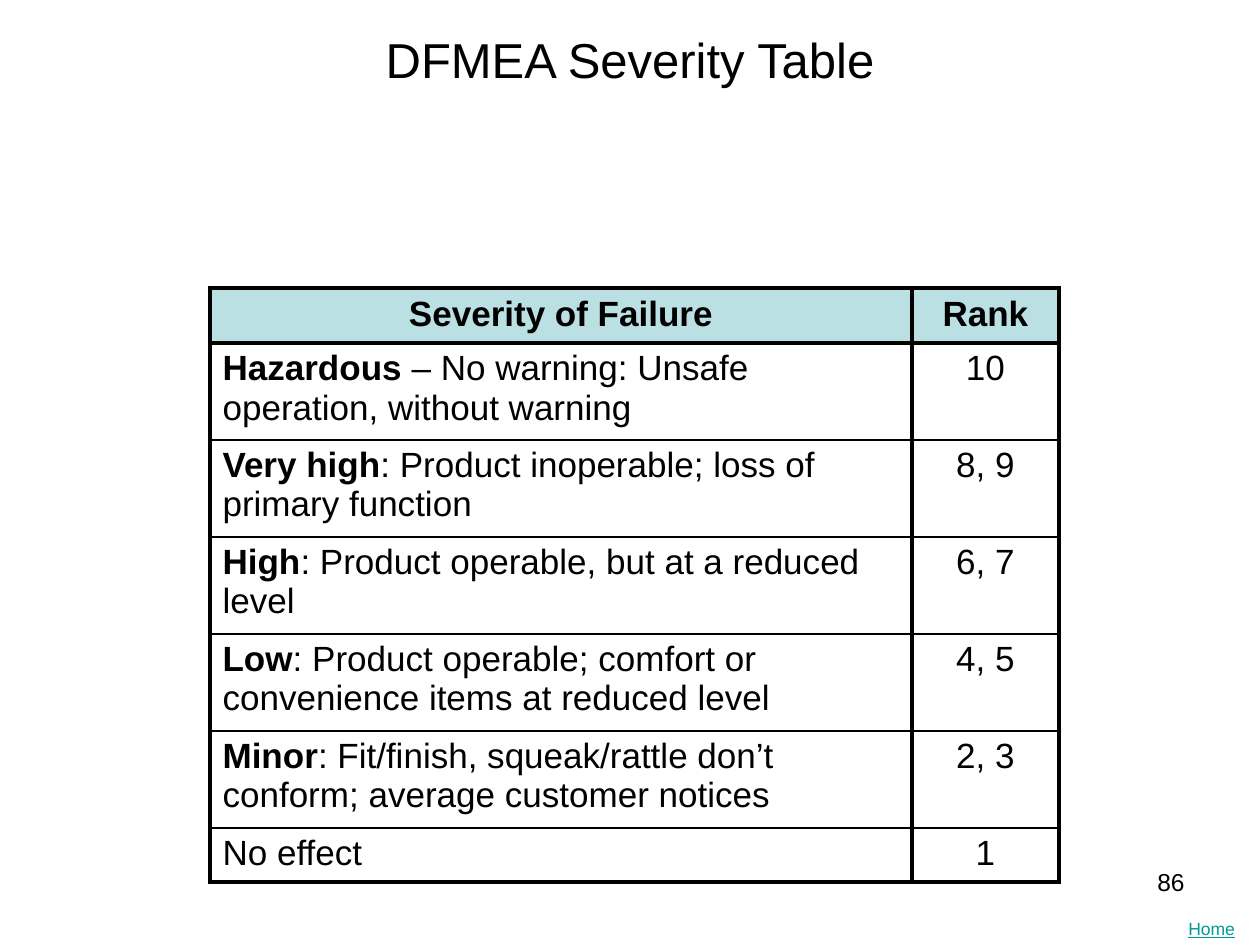
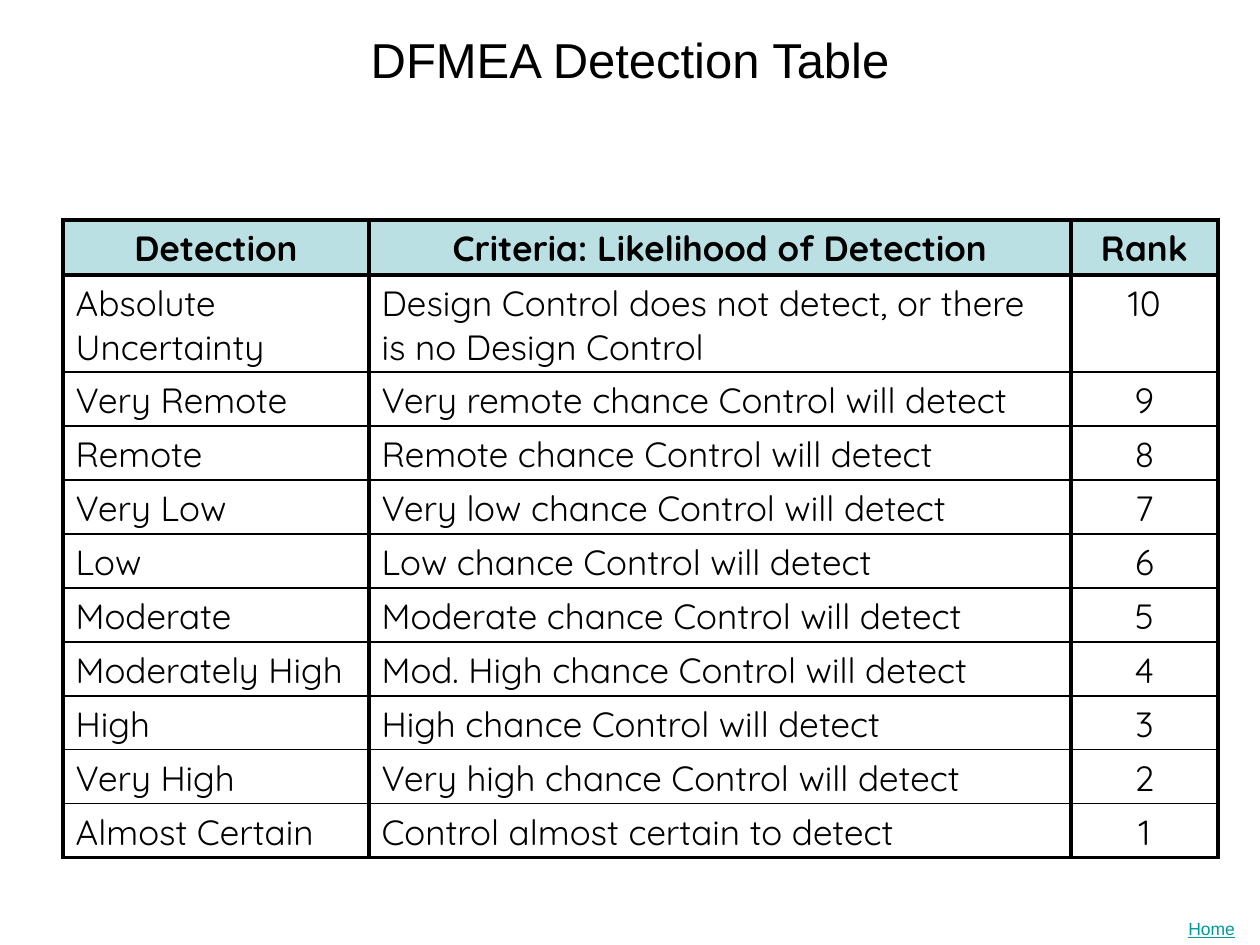
import pptx
import pptx.dml.color
import pptx.enum.text
import pptx.oxml
import pptx.oxml.ns
import pptx.util

PX_PER_INCH = 126
COLORS = {"text": "000000", "line": "000000", "header": "BBE0E3", "link": "009999"}
TITLE_FONT = "Arial"
THICK, THIN = 2.25, 1
HEADER_HEIGHT, SINGLE_HEIGHT, DOUBLE_HEIGHT = 55, 54, 97
ALIGN = pptx.enum.text.PP_ALIGN

SEVERITY_ROWS = [
    ("Severity of Failure", "Rank"),
    ("Hazardous| – No warning: Unsafe operation, without warning", "10"),
    ("Very high|: Product inoperable; loss of primary function", "8, 9"),
    ("High|: Product operable, but at a reduced level", "6, 7"),
    ("Low|: Product operable; comfort or convenience items at reduced level", "4, 5"),
    ("Minor|: Fit/finish, squeak/rattle don’t conform; average customer notices", "2, 3"),
    ("No effect", "1"),
]
DETECTION_ROWS = [
    ("Detection", "Criteria: Likelihood of Detection", "Rank"),
    ("Absolute Uncertainty",
     "Design Control does not detect, or there is no Design Control", "10"),
    ("Very Remote", "Very remote chance Control will detect", "9"),
    ("Remote", "Remote chance Control will detect", "8"),
    ("Very Low", "Very low chance Control will detect", "7"),
    ("Low", "Low chance Control will detect", "6"),
    ("Moderate", "Moderate chance Control will detect", "5"),
    ("Moderately High", "Mod. High chance Control will detect", "4"),
    ("High", "High chance Control will detect", "3"),
    ("Very High", "Very high chance Control will detect", "2"),
    ("Almost Certain", "Control almost certain to detect", "1"),
]


def px(length):
    return pptx.util.Emu(round(length * 914400 / PX_PER_INCH))


def rgb(name):
    return pptx.dml.color.RGBColor.from_string(COLORS[name])


def format_run(run, size, font=TITLE_FONT, color="text", bold=False):
    run.font.size = pptx.util.Pt(size)
    run.font.name = font
    run.font.bold = bold
    run.font.color.rgb = rgb(color)


def add_title(slide, text):
    title = slide.shapes.title
    title.left, title.top, title.width, title.height = map(px, (63, 10, 1134, 98))
    title.text_frame.text = text
    title.text_frame.vertical_anchor = pptx.enum.text.MSO_ANCHOR.MIDDLE
    paragraph = title.text_frame.paragraphs[0]
    paragraph.alignment = ALIGN.CENTER
    format_run(paragraph.runs[0], 28)


def add_label(slide, text, box, size, color="text", align=ALIGN.LEFT):
    label = slide.shapes.add_textbox(*map(px, box))
    label.text_frame.word_wrap = True
    label.text_frame.text = text
    paragraph = label.text_frame.paragraphs[0]
    paragraph.alignment = align
    format_run(paragraph.runs[0], size, color=color)
    return paragraph.runs[0]


def add_home_label(slide):
    run = add_label(slide, "Home", (1176, 912, 84, 34), 10, color="link")
    run.font.underline = True


def set_borders(cell, top, bottom):
    """Rule all four sides; the left and right sides are always thick."""
    properties = cell._tc.get_or_add_tcPr()
    for side, points in (("L", THICK), ("R", THICK), ("T", top), ("B", bottom)):
        properties.append(pptx.oxml.parse_xml(
            f'<a:ln{side} {pptx.oxml.ns.nsdecls("a")} w="{int(pptx.util.Pt(points))}">'
            f'<a:solidFill><a:srgbClr val="{COLORS["line"]}"/></a:solidFill></a:ln{side}>'))


def fill_cell_text(cell, text, font, is_header, align):
    """Write the text; in a body cell, the part before a bar is bold."""
    cell.margin_bottom = px(2)
    paragraph = cell.text_frame.paragraphs[0]
    paragraph.alignment = align
    parts = text.split("|")
    for index, part in enumerate(parts):
        run = paragraph.add_run()
        run.text = part
        format_run(run, 20, font, bold=is_header or index < len(parts) - 1)


def add_rank_table(slide, rows, left, top, widths, font, double_rows):
    """Add a table whose last column, the rank, is centred."""
    heights = [HEADER_HEIGHT] + [
        DOUBLE_HEIGHT if index in double_rows else SINGLE_HEIGHT
        for index in range(1, len(rows))]
    frame = slide.shapes.add_table(len(rows), len(widths), px(left), px(top),
                                   px(sum(widths)), px(sum(heights)))
    table = frame.table
    table.first_row = table.horz_banding = False
    for column, width in zip(table.columns, widths):
        column.width = px(width)
    last_row, last_column = len(rows) - 1, len(widths) - 1
    for row_index, texts in enumerate(rows):
        table.rows[row_index].height = px(heights[row_index])
        is_header = row_index == 0
        for column_index, text in enumerate(texts):
            cell = table.cell(row_index, column_index)
            set_borders(cell, THICK if row_index <= 1 else THIN,
                        THICK if row_index in (0, last_row) else THIN)
            if is_header:
                cell.fill.solid()
                cell.fill.fore_color.rgb = rgb("header")
            else:
                cell.fill.background()
            centred = is_header or column_index == last_column
            fill_cell_text(cell, text, font, is_header,
                           ALIGN.CENTER if centred else ALIGN.LEFT)


def add_slide(presentation, title):
    slide = presentation.slides.add_slide(presentation.slide_layouts[5])
    add_home_label(slide)
    add_title(slide, title)
    return slide


def main():
    presentation = pptx.Presentation()
    presentation.slide_width, presentation.slide_height = px(1260), px(945)

    severity = add_slide(presentation, "DFMEA Severity Table")
    add_label(severity, "86", (903, 861, 294, 66), 14, align=ALIGN.RIGHT)
    add_rank_table(severity, SEVERITY_ROWS, 210, 288, (702, 147), "Arial", range(1, 6))

    detection = add_slide(presentation, "DFMEA Detection Table")
    add_rank_table(detection, DETECTION_ROWS, 63, 220, (306, 702, 147), "Quicksand", (1,))

    presentation.save("out.pptx")


if __name__ == "__main__":
    main()
